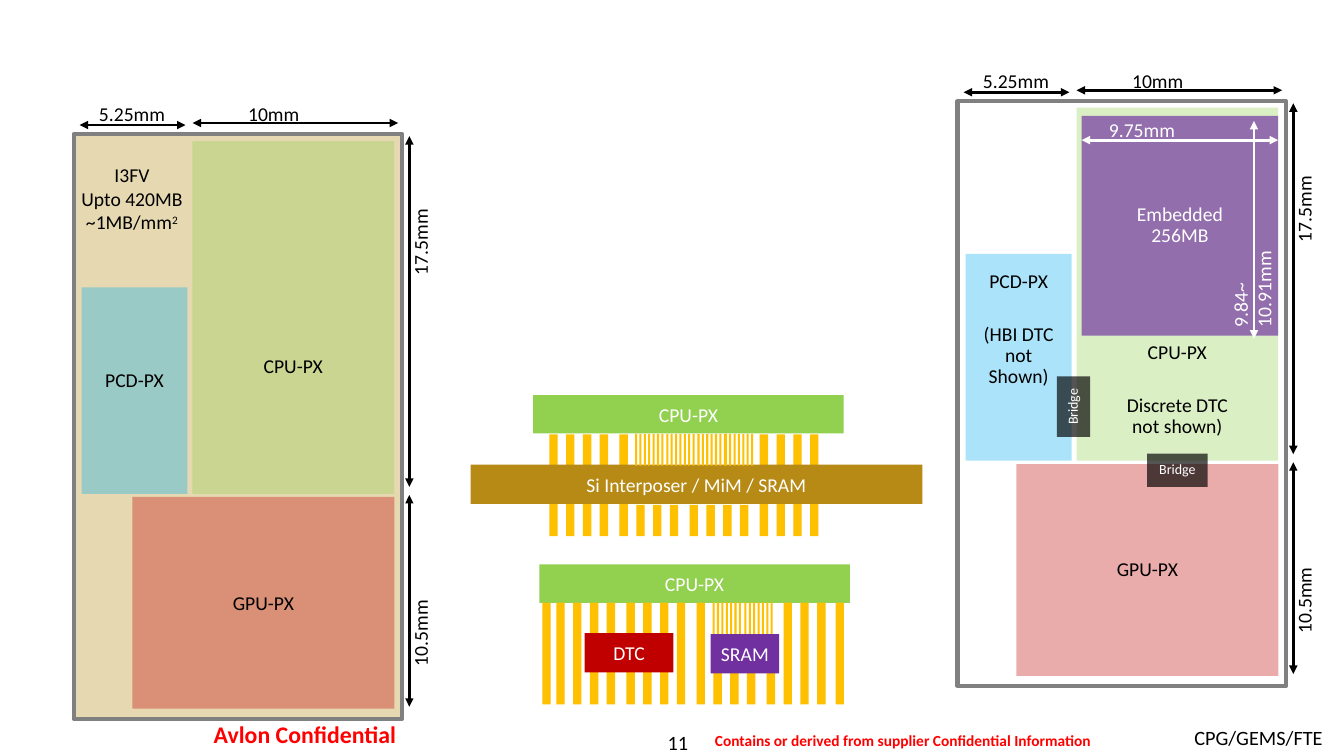
from dataclasses import dataclass

from lxml.etree import SubElement
from pptx import Presentation
from pptx.dml.color import RGBColor
from pptx.enum.shapes import MSO_CONNECTOR as Connector, MSO_SHAPE as Shape
from pptx.enum.text import MSO_ANCHOR as Anchor, PP_ALIGN as Align
from pptx.oxml.ns import qn
from pptx.util import Pt

BLACK, WHITE, RED, GREY = "000000", "FFFFFF", "FF0000", "808080"
GREEN, GOLD, BROWN = "92D050", "FFC000", "B68A15"
BLUE, DARK_RED, PURPLE = "00B0F0", "C00000", "7030A0"


@dataclass
class Block:
    """A filled rectangle, with its text if it has any."""
    left: float
    top: float
    width: float
    height: float
    fill: str | None
    text: tuple[str, ...] = ()
    alpha: int = 100
    color: str = WHITE
    size: float = 14
    pad_top: float = 3.6
    pad_bottom: float = 3.6
    tight: bool = False
    rotation: int = 0
    outline: str | None = None


@dataclass
class Label:
    """A text box; padding is the left/right and top/bottom inset."""
    left: float
    top: float
    width: float
    height: float
    text: tuple[str, ...]
    color: str = BLACK
    size: float = 14
    rotation: int = 0
    align: Align = Align.CENTER
    padding: tuple[float, float] = (0, 0)
    bold: bool = False


@dataclass
class Arrow:
    """A line with a head at both ends."""
    x1: float
    y1: float
    x2: float
    y2: float
    color: str = BLACK


def rgb(value: str) -> RGBColor:
    return RGBColor.from_string(value)


def write(box, item: Block | Label, tight: bool = False, bold: bool = False,
          align: Align = Align.CENTER) -> None:
    frame = box.text_frame
    font_format = {"name": "Calibri", "size": Pt(item.size), "bold": bold}
    for index, line in enumerate(item.text):
        para = frame.add_paragraph() if index else frame.paragraphs[0]
        para.text = line
        para.alignment = align
        if tight:
            para.line_spacing = 0.9
            para.space_before = Pt(22.5 if index else 0)
        for span in para.runs:
            for key, value in font_format.items():
                setattr(span.font, key, value)
            span.font.color.rgb = rgb(item.color)


def draw_block(page, item: Block):
    box = page.shapes.add_shape(Shape.RECTANGLE, Pt(item.left), Pt(item.top),
                                Pt(item.width), Pt(item.height))
    box.shadow.inherit = False
    box.rotation = item.rotation
    if item.fill:
        box.fill.solid()
        box.fill.fore_color.rgb = rgb(item.fill)
        if item.alpha < 100:
            color = box._element.spPr.find(qn("a:solidFill"))[0]
            SubElement(color, qn("a:alpha"), val=str(item.alpha * 1000))
    else:
        box.fill.background()
    if item.outline:
        box.line.color.rgb = rgb(item.outline)
        box.line.width = Pt(3)
    else:
        box.line.fill.background()
    if item.text:
        settings = {"word_wrap": True, "vertical_anchor": Anchor.MIDDLE,
                    "margin_top": Pt(item.pad_top),
                    "margin_bottom": Pt(item.pad_bottom)}
        for key, value in settings.items():
            setattr(box.text_frame, key, value)
        write(box, item, tight=item.tight)


def draw_label(page, item: Label):
    box = page.shapes.add_textbox(Pt(item.left), Pt(item.top),
                                  Pt(item.width), Pt(item.height))
    box.rotation = item.rotation
    side, end = (Pt(inset) for inset in item.padding)
    settings = {"word_wrap": False, "margin_left": side, "margin_right": side,
                "margin_top": end, "margin_bottom": end}
    if item.align != Align.CENTER:
        settings["word_wrap"] = True
    for key, value in settings.items():
        setattr(box.text_frame, key, value)
    write(box, item, bold=item.bold, align=item.align)
    return box


def draw_arrow(page, item: Arrow) -> None:
    arrow = page.shapes.add_connector(Connector.STRAIGHT, Pt(item.x1), Pt(item.y1),
                                      Pt(item.x2), Pt(item.y2))
    arrow.line.color.rgb = rgb(item.color)
    arrow.line.width = Pt(2)
    line = arrow.line._get_or_add_ln()
    for end in ("a:headEnd", "a:tailEnd"):
        SubElement(line, qn(end), type="triangle")
    SubElement(arrow._element.spPr, qn("a:effectLst"))


def draw_pins(page, left: float, top: float, short: range) -> None:
    """Four groups of four pins; the short ones keep only their lower end."""
    for pin in range(16):
        height = 22.3 if pin in short else 72.7
        x = left + 50.1 * (pin // 4) + 12 * (pin % 4)
        draw_block(page, Block(x, top + 72.7 - height, 6, height, GOLD))


def draw_combs(page, starts: tuple[float, ...], top: float) -> None:
    for start in starts:
        for wire in range(7):
            draw_block(page, Block(start + 3.13 * wire, top, 1.5, 22.7, GOLD))


def draw_package(page, x: float, y: float, fill: str | None, cpu: Block,
                 pcd: Block, tight: bool) -> None:
    """Frame, three dies and the dimensions around them."""
    draw_block(page, Block(x, y, 234.7, 417.6, fill, alpha=33, outline=GREY))
    draw_block(page, cpu)
    draw_block(page, Block(x + 42, y + 259.2, 187.2, 151.2, DARK_RED, ("GPU-PX",),
                           33, BLACK, tight=tight))
    draw_block(page, pcd)
    for arrow in (Arrow(x + 85, y - 7.9, x + 231.8, y - 7.9),
                  Arrow(x + 4.3, y - 6.5, x + 79.9, y - 6.5),
                  Arrow(x + 239.8, y + 1.4, x + 239.8, y + 252),
                  Arrow(x + 239.8, y + 257.8, x + 239.8, y + 409)):
        draw_arrow(page, arrow)
    for label in (Label(x + 124.6, y - 23, 36.7, 17.3, ("10mm",)),
                  Label(x + 18, y - 23, 47.5, 17.3, ("5.25mm",)),
                  Label(x + 223.9, y + 68.4, 47.5, 17.3, ("17.5mm",), rotation=270),
                  Label(x + 223.9, y + 347.8, 47.5, 17.3, ("10.5mm",), rotation=270)):
        draw_label(page, label)


def main() -> None:
    deck = Presentation()
    deck.slide_width, deck.slide_height = Pt(960), Pt(540)
    page = deck.slides.add_slide(deck.slide_layouts[6])

    # Footer
    for label in (
            Label(400.3, 521.3, 167.8, 17.3, ("11",), size=14.5),
            Label(635.8, 514.8, 316.1, 25.2, ("CPG/GEMS/FTE",), size=14.5,
                  align=Align.RIGHT, padding=(7.2, 3.6)),
            Label(111.6, 509.8, 212.4, 29.5, ("Avlon Confidential",), RED, 17,
                  padding=(8.6, 4.3), bold=True),
            Label(498.2, 517.7, 293.8, 22.3,
                  ("Contains or derived from supplier Confidential Information",),
                  RED, 11, padding=(8.6, 4.3), bold=True)):
        draw_label(page, label)

    # Side view with interposer
    draw_block(page, Block(380.9, 282.2, 221.8, 27.4, GREEN, ("CPU-PX",)))
    draw_pins(page, 392.4, 310.2, range(5, 12))
    draw_block(page, Block(336.2, 331.9, 322.6, 28.1, BROWN,
                           ("Si Interposer / MiM / SRAM",)))
    draw_combs(page, (453.6, 475.9, 498.2, 517.7), 310)

    # Side view with embedded dies
    draw_block(page, Block(385.2, 403.2, 221.8, 27.4, GREEN, ("CPU-PX",)))
    draw_pins(page, 397.4, 430.4, range(9, 13))
    for edge in (387.4, 596.9):
        draw_block(page, Block(edge, 430.4, 6, 72.7, GOLD))
    draw_combs(page, (509, 531.7), 430.2)
    draw_block(page, Block(507.6, 452.9, 49, 28.1, PURPLE, ("SRAM",)))
    draw_block(page, Block(417.6, 452.2, 63.4, 28.1, DARK_RED, ("DTC",)))

    # Left package
    draw_package(page, 52.6, 95.8, BROWN,
                 Block(137.5, 100.8, 144, 252, GREEN, ("CPU-PX",), 33, BLACK, pad_top=72),
                 Block(58.3, 205.2, 75.6, 147.6, BLUE, ("PCD-PX",), 33, BLACK,
                       pad_bottom=19), False)
    cache = draw_label(page, Label(57.6, 116.6, 73.4, 51.1,
                                   ("I3FV", "Upto 420MB", "~1MB/mm")))
    square = cache.text_frame.paragraphs[-1].add_run()
    square.text = "2"
    for key, value in {"name": "Calibri", "size": Pt(14)}.items():
        setattr(square.font, key, value)
    square.font.color.rgb = rgb(BLACK)
    square._r.get_or_add_rPr().set("baseline", "30000")

    # Right package
    draw_package(page, 684, 72.4, None,
                 Block(769, 77, 144, 252, GREEN, ("CPU-PX", "Discrete DTC\nnot shown)"),
                       33, BLACK, pad_top=155, tight=True),
                 Block(689.8, 181.4, 75.6, 147.6, BLUE,
                       ("PCD-PX", "(HBI DTC\nnot Shown)"), 33, BLACK,
                       pad_bottom=43, tight=True), True)
    draw_block(page, Block(772.6, 82.8, 140.4, 157, PURPLE, ("Embedded\n256MB",), 67,
                           tight=True))
    for left, top, rotation in ((819.4, 324, 0), (745.2, 278.6, 270)):
        draw_block(page, Block(left, top, 43.2, 23.8, BLACK, ("Bridge",), 67, size=10,
                               tight=True, rotation=rotation))
    draw_arrow(page, Arrow(895.7, 86.4, 895.7, 241.9, WHITE))
    draw_arrow(page, Arrow(772.6, 100.1, 913, 100.1, WHITE))
    draw_label(page, Label(866.9, 189.4, 54.7, 33.8, ("9.84~", "10.91mm"), WHITE,
                           rotation=270, align=Align.LEFT))
    draw_label(page, Label(792, 84.2, 47.5, 17.3, ("9.75mm",), WHITE))

    deck.save("out.pptx")


if __name__ == "__main__":
    main()
